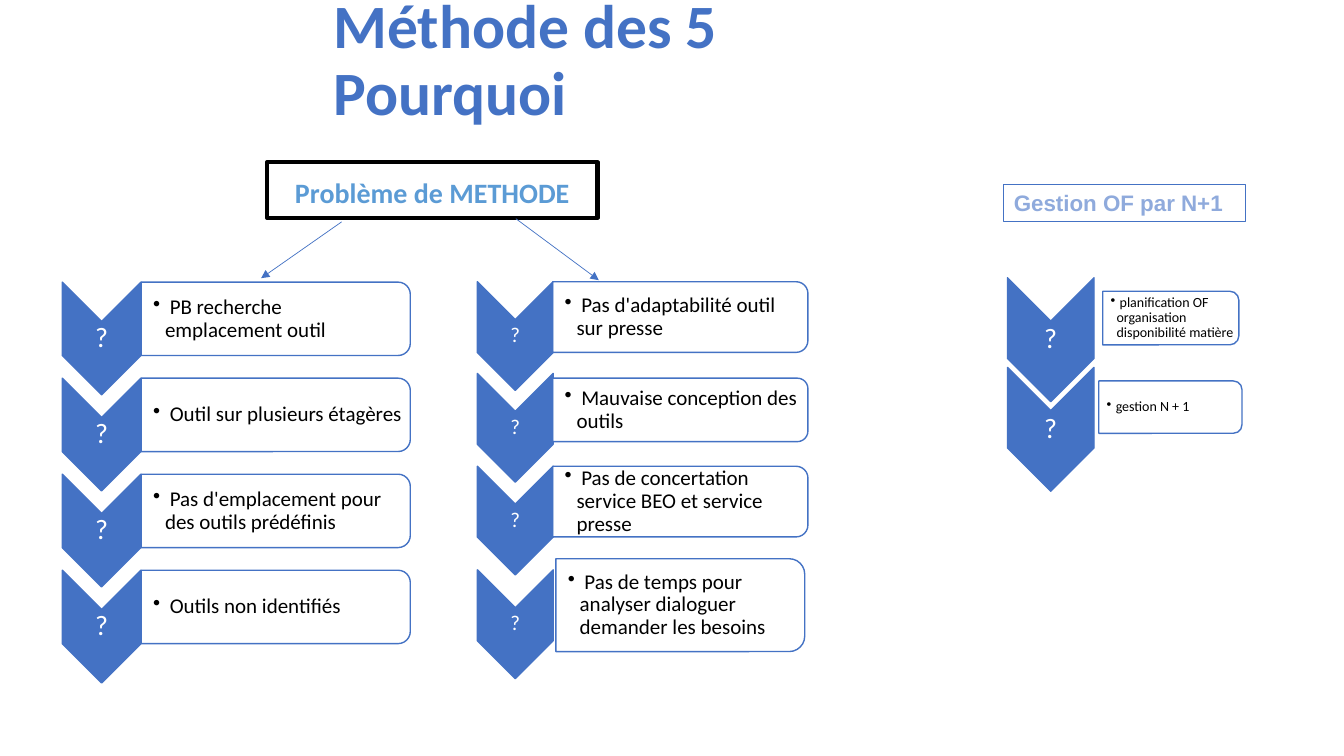
"""Build the « Méthode des 5 Pourquoi » slide."""
from dataclasses import dataclass
from typing import Any

from lxml.etree import SubElement
from pptx import Presentation
from pptx.dml.color import RGBColor
from pptx.enum.shapes import MSO_CONNECTOR as Connector, MSO_SHAPE as Preset
from pptx.enum.text import MSO_ANCHOR as Anchor, MSO_AUTO_SIZE as AutoSize, PP_ALIGN as Align
from pptx.oxml.ns import qn
from pptx.util import Cm, Pt

COLOURS = {
    "blue": "4472C4",
    "sky": "5B9BD5",
    "pale": "8FAADC",
    "white": "FFFFFF",
    "black": "000000",
}


@dataclass
class Step:
    top: float
    answer: str
    box_left: float
    box_top: float
    box_width: float
    box_height: float


@dataclass
class Chain:
    left: float
    width: float
    height: float
    mark_size: float
    answer_size: float
    inset: float
    indent: float
    steps: list[Step]


@dataclass
class Arrow:
    start: tuple[float, float]
    end: tuple[float, float]


SEARCH_ANSWERS = [
    " PB recherche\nemplacement outil",
    " Outil sur plusieurs étagères",
    " Pas d'emplacement pour des outils prédéfinis",
    " Outils non identifiés",
]
SEARCH_TOPS = [7.11 + 2.42 * row for row in range(len(SEARCH_ANSWERS))]

CHAINS = [
    Chain(1.57, 1.98, 2.84, 20, 15, 0.3, 0.3, [
        Step(top, answer, 3.56, top, 6.78, 1.85)
        for top, answer in zip(SEARCH_TOPS, SEARCH_ANSWERS)
    ]),
    Chain(12.03, 1.91, 2.74, 15, 15, 0.3, 0.3, [
        Step(7.1, " Pas d'adaptabilité outil sur presse", 13.93, 7.1, 6.43, 1.78),
        Step(9.41, " Mauvaise conception des outils", 13.93, 9.53, 6.43, 1.6),
        Step(11.75, " Pas de concertation service BEO et service presse", 13.93, 11.75, 6.43, 1.78),
        Step(14.36, " Pas de temps pour analyser dialoguer demander les besoins", 14.01, 14.08, 6.27, 2.34),
    ]),
    Chain(25.39, 2.18, 3.12, 20, 10, 0.2, 0.15, [
        Step(7, " planification OF\norganisation\ndisponibilité matière", 27.79, 7.34, 3.43, 1.35),
        Step(9.26, " gestion N + 1", 27.69, 9.6, 3.61, 1.32),
    ]),
]

ARROWS = [Arrow((8.61, 5.59), (6.58, 7.01)), Arrow((13, 5.51), (15.09, 7.06))]


def colour(name: str) -> RGBColor:
    """Return the named colour."""
    return RGBColor.from_string(COLOURS[name])


def assign(target: Any, formats: dict[str, Any]) -> None:
    """Set each attribute of the target from the format values."""
    for name, value in formats.items():
        setattr(target, name, value)


def write(shape: Any, text: str, font: dict[str, Any], ink: str,
          frame: dict[str, Any], layout: dict[str, Any]) -> Any:
    """Fill a shape with one formatted paragraph and return it."""
    text_frame = shape.text_frame
    assign(text_frame, {"word_wrap": True, "auto_size": AutoSize.NONE, **frame})
    paragraph = text_frame.paragraphs[0]
    paragraph.text = text
    assign(paragraph, layout)
    for run in paragraph.runs:
        assign(run.font, {"name": "Calibri", **font})
        run.font.color.rgb = colour(ink)
    return paragraph


def add_preset(shapes: Any, preset: Preset, area: tuple[float, ...], fill: str | None,
               line: str, weight: float) -> Any:
    """Add a filled and outlined preset shape."""
    shape = shapes.add_shape(preset, *map(Cm, area))
    shape.shadow.inherit = False
    if fill:
        shape.fill.solid()
        shape.fill.fore_color.rgb = colour(fill)
    else:
        shape.fill.background()
    shape.line.color.rgb = colour(line)
    shape.line.width = Pt(weight)
    return shape


def add_turned(shapes: Any, preset: Preset, area: tuple[float, ...], fill: str) -> Any:
    """Add a preset turned by 90 degrees that covers the given area."""
    left, top, width, height = area
    shift = (width - height) / 2
    shape = add_preset(shapes, preset, (left + shift, top - shift, height, width), fill, "blue", 1)
    shape.rotation = 90
    return shape


def add_label(shapes: Any, area: tuple[float, ...], text: str, size: float, ink: str,
              inset: float, layout: dict[str, Any]) -> Any:
    """Add a vertically centred text box with narrow margins."""
    margins = {f"margin_{side}": Cm(0.03) for side in ("top", "right", "bottom")}
    frame = {"vertical_anchor": Anchor.MIDDLE, "margin_left": Cm(inset), **margins}
    label = shapes.add_textbox(*map(Cm, area))
    return write(label, text, {"size": Pt(size)}, ink, frame, {"line_spacing": 0.9, **layout})


def add_bullet(paragraph: Any, indent: float) -> None:
    """Give the paragraph a hanging round bullet."""
    properties = paragraph._p.get_or_add_pPr()
    properties.set("marL", str(Cm(indent)))
    properties.set("indent", str(-Cm(indent)))
    SubElement(properties, qn("a:buChar")).set("char", "•")


def add_chain(slide: Any, chain: Chain) -> None:
    """Add one group of chevrons with their answers."""
    shapes = slide.shapes.add_group_shape().shapes
    for step in chain.steps:
        add_turned(shapes, Preset.CHEVRON, (chain.left, step.top, chain.width, chain.height), "blue")
        mark_area = (chain.left, step.top + chain.width / 2, chain.width, chain.height - chain.width)
        add_label(shapes, mark_area, "?", chain.mark_size, "white", 0.03, {"alignment": Align.CENTER})
        box_area = (step.box_left, step.box_top, step.box_width, step.box_height)
        box = add_turned(shapes, Preset.ROUND_2_SAME_RECTANGLE, box_area, "white")
        fill_colour = box._element.spPr.find(qn("a:solidFill")).find(qn("a:srgbClr"))
        SubElement(fill_colour, qn("a:alpha")).set("val", "90000")
        answer_area = (step.box_left, step.box_top + step.box_height * 0.05,
                       step.box_width - 0.09, step.box_height * 0.9)
        paragraph = add_label(shapes, answer_area, step.answer, chain.answer_size, "black",
                              chain.inset, {"level": 1, "alignment": Align.LEFT})
        add_bullet(paragraph, chain.indent)


def add_arrow(slide: Any, arrow: Arrow) -> None:
    """Add a thin line that ends in a triangle."""
    connector = slide.shapes.add_connector(
        Connector.STRAIGHT, *map(Cm, arrow.start + arrow.end))
    connector.line.color.rgb = colour("blue")
    connector.line.width = Pt(0.5)
    SubElement(connector.line._get_or_add_ln(), qn("a:tailEnd")).set("type", "triangle")
    SubElement(connector._element.spPr, qn("a:effectLst"))


def main() -> None:
    """Build and save the presentation."""
    presentation = Presentation()
    assign(presentation, {"slide_width": Cm(33.87), "slide_height": Cm(19.05)})
    slide = presentation.slides.add_slide(presentation.slide_layouts[5])
    title = slide.shapes.title
    assign(title, {"left": Cm(8.15), "top": Cm(0.28), "width": Cm(16.08), "height": Cm(2.57)})
    write(title, "Méthode des 5 Pourquoi", {"size": Pt(44), "bold": True}, "blue",
          {"vertical_anchor": Anchor.MIDDLE}, {"alignment": Align.LEFT, "line_spacing": 0.9})
    problem = add_preset(slide.shapes, Preset.RECTANGLE, (6.73, 4.09, 8.33, 1.4), "white", "black", 3)
    write(problem, "Problème de METHODE", {"size": Pt(20), "bold": True}, "sky",
          {"vertical_anchor": Anchor.MIDDLE}, {"alignment": Align.CENTER, "line_spacing": 1.15})
    for arrow in ARROWS:
        add_arrow(slide, arrow)
    management = add_preset(slide.shapes, Preset.RECTANGLE, (25.3, 4.65, 6.1, 0.94), None, "blue", 0.75)
    write(management, "Gestion OF par N+1", {"size": Pt(16), "bold": True, "name": "Arial"}, "pale",
          {"vertical_anchor": Anchor.TOP}, {"alignment": Align.LEFT})
    for chain in CHAINS:
        add_chain(slide, chain)
    presentation.save("out.pptx")


if __name__ == "__main__":
    main()
